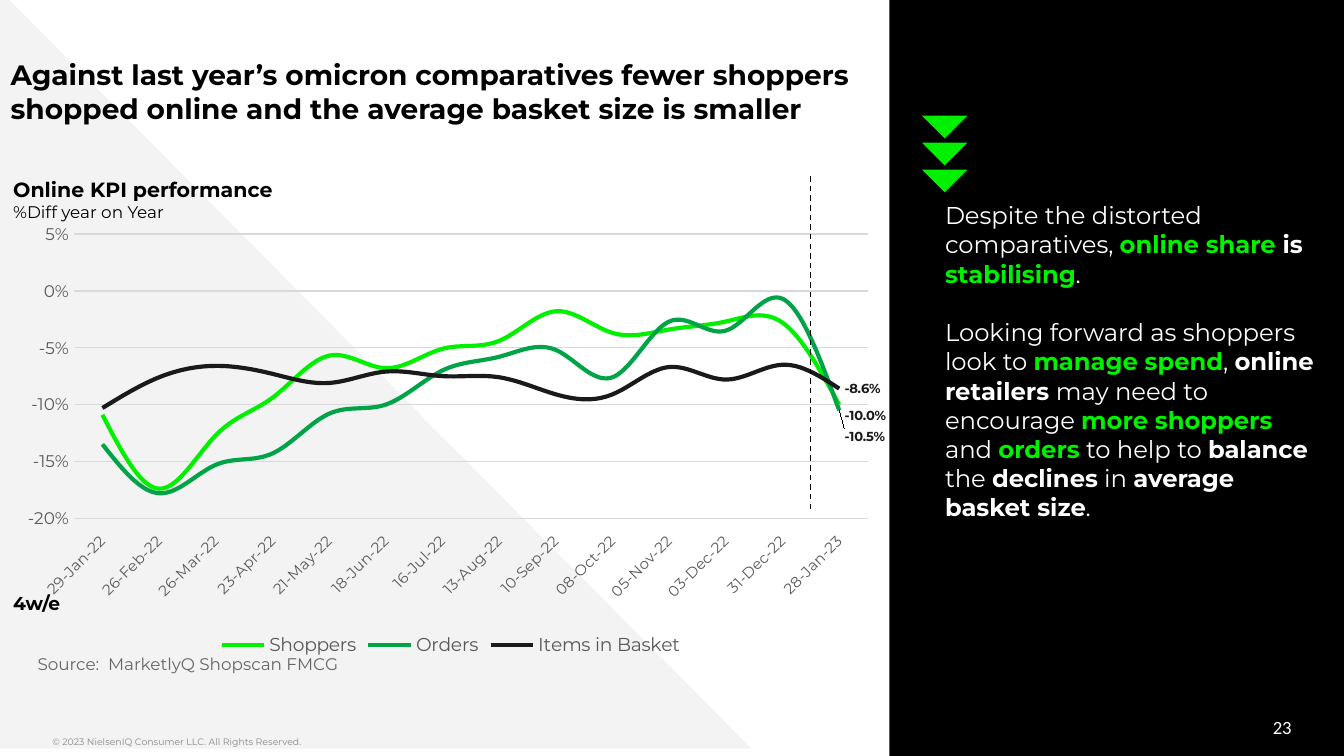
"""Build the online KPI slide with its line chart and takeaway panel."""
from dataclasses import dataclass

from lxml import etree
from pptx import Presentation
from pptx.chart.data import CategoryChartData
from pptx.dml.color import RGBColor
from pptx.enum import chart as ch, dml, shapes, text
from pptx.oxml import parse_xml
from pptx.oxml.ns import nsdecls, qn
from pptx.util import Cm, Pt


@dataclass(frozen=True)
class Theme:
    font: str = "Montserrat"
    num: str = "Calibri"
    black: str = "000000"
    white: str = "FFFFFF"
    pale: str = "F3F3F3"
    lime: str = "00F000"
    green: str = "00A346"
    ink: str = "1A1A1A"
    axis: str = "595959"
    grid: str = "D9D9D9"
    note: str = "666666"
    foot: str = "888888"
    title: float = 15
    body: float = 13
    head: float = 11
    label: float = 10
    small: float = 9
    date: float = 8
    value: float = 7
    tiny: float = 5


T = Theme()
rgb = RGBColor.from_string


def style(font, size, color, bold=False, name=T.font):
    font.size, font.bold, font.name = Pt(size), bold, name
    font.color.rgb = rgb(color)


def layout(inner="", **spots):
    items = "".join(f'<c:{k} val="{v}"/>' for k, v in spots.items())
    return parse_xml(f'<c:layout {nsdecls("c")}><c:manualLayout>{inner}{items}'
                     '</c:manualLayout></c:layout>')


deck = Presentation()
deck.slide_width, deck.slide_height = Cm(25.4), Cm(14.29)
slide = deck.slides.add_slide(deck.slide_layouts[1])
title, body = slide.placeholders

back = [
    (shapes.MSO_SHAPE.RECTANGLE, 16.81, -0.05, 8.71, 14.38, 0, T.black),
    (shapes.MSO_SHAPE.RIGHT_TRIANGLE, 0, -0.18, 14.2, 14.33, 0, T.pale),
]
marks = [(shapes.MSO_SHAPE.RIGHT_TRIANGLE, 17.55, 1.88 + 0.51 * i, 0.61, 0.61, 315, T.lime)
         for i in range(3)]
for kind, x, y, w, h, turn, color in back + marks:
    shape = slide.shapes.add_shape(kind, Cm(x), Cm(y), Cm(w), Cm(h))
    shape.shadow.inherit = False
    shape.rotation = turn
    shape.fill.solid()
    shape.fill.fore_color.rgb = rgb(color)
    shape.line.fill.background()
    title.element.addprevious(shape.element)

for box, x, y, w, h, pad in [(title, 0.2, 0.84, 16.89, 1.09, 0.25),
                             (body, 17.86, 3.66, 7.09, 8.92, 0.13)]:
    box.left, box.top, box.width, box.height = Cm(x), Cm(y), Cm(w), Cm(h)
    frame = box.text_frame
    frame.margin_left = frame.margin_right = 0
    frame.margin_top = frame.margin_bottom = Cm(pad)
    frame.vertical_anchor = text.MSO_ANCHOR.TOP
    frame.auto_size = text.MSO_AUTO_SIZE.NONE

para = title.text_frame.paragraphs[0]
para.text = ("Against last year’s omicron comparatives fewer shoppers "
             "shopped online and the average basket size is smaller")
para.alignment = text.PP_ALIGN.LEFT
style(para.font, T.title, T.black, True)

looks = {"plain": (T.white, False), "bold": (T.white, True), "lime": (T.lime, True)}
points = [
    [("Despite the distorted comparatives, ", "plain"), ("online share ", "lime"),
     ("is ", "bold"), ("stabilising", "lime"), (".", "plain")],
    [("Looking forward as shoppers look to ", "plain"), ("manage spend", "lime"),
     (", ", "plain"), ("online retailers ", "bold"), ("may need to encourage ", "plain"),
     ("more shoppers ", "lime"), ("and ", "plain"), ("orders", "lime"),
     (" to help to ", "plain"), ("balance", "bold"), (" the ", "plain"),
     ("declines", "bold"), (" in ", "plain"), ("average basket size", "bold"),
     (".", "plain")],
]
frame = body.text_frame
for i, parts in enumerate(points):
    para = frame.add_paragraph() if i else frame.paragraphs[0]
    para.space_before = Pt(15.8 * i)
    props = para._p.get_or_add_pPr()
    props.set("marL", "0")
    props.set("indent", "0")
    etree.SubElement(props, qn("a:buNone"))
    style(para.font, T.body, T.white)
    for words, look in parts:
        run = para.add_run()
        run.text = words
        color, run.font.bold = looks[look]
        run.font.color.rgb = rgb(color)

dates = ("29-Jan-22 26-Feb-22 26-Mar-22 23-Apr-22 21-May-22 18-Jun-22 16-Jul-22 "
         "13-Aug-22 10-Sep-22 08-Oct-22 05-Nov-22 03-Dec-22 31-Dec-22 28-Jan-23").split()
rows = [
    ("Shoppers", T.lime, 0.025,
     (-0.109, -0.174, -0.127, -0.094, -0.057, -0.068, -0.051,
      -0.044, -0.018, -0.037, -0.034, -0.027, -0.028, -0.1)),
    ("Orders", T.green, 0.06,
     (-0.135, -0.178, -0.153, -0.143, -0.108, -0.1, -0.07,
      -0.058, -0.052, -0.076, -0.027, -0.035, -0.007, -0.105)),
    ("Items in Basket", T.ink, 0,
     (-0.103, -0.076, -0.066, -0.073, -0.081, -0.071, -0.075,
      -0.076, -0.091, -0.091, -0.067, -0.078, -0.065, -0.086)),
]
data = CategoryChartData(number_format="0.0%")
data.categories = dates
for name, _, _, vals in rows:
    data.add_series(name, vals)
chart = slide.shapes.add_chart(ch.XL_CHART_TYPE.LINE, Cm(0.28), Cm(4.19),
                               Cm(16.48), Cm(8.31), data).chart
chart.has_title = False
style(chart.font, T.label, T.axis)
chart.has_legend = True
chart.legend.position = ch.XL_LEGEND_POSITION.BOTTOM
chart.legend.include_in_layout = False
style(chart.legend.font, T.label, T.axis)

cat, val = chart.category_axis, chart.value_axis
cat.tick_label_position = ch.XL_TICK_LABEL_POSITION.LOW
cat.major_tick_mark = val.major_tick_mark = ch.XL_TICK_MARK.NONE
style(cat.tick_labels.font, T.date, T.axis)
style(val.tick_labels.font, T.small, T.axis)
val.minimum_scale, val.maximum_scale, val.major_unit = -0.2, 0.05, 0.05
val.tick_labels.number_format = "0%"
val.tick_labels.number_format_is_linked = False
val.format.line.fill.background()
val.has_major_gridlines = True
for line in (cat.format.line, val.major_gridlines.format.line):
    line.color.rgb = rgb(T.grid)
    line.width = Pt(0.75)

for line, (_, color, _, _) in zip(chart.plots[0].series, rows):
    line.smooth = True
    line.marker.style = ch.XL_MARKER_STYLE.NONE
    line.format.line.color.rgb = rgb(color)
    line.format.line.width = Pt(2.25)
    line.data_labels.show_value = False
    label = line.points[len(dates) - 1].data_label
    style(label.font, T.value, T.axis, True)
    label.font.color.rgb = rgb(T.ink)
    label.position = ch.XL_LABEL_POSITION.RIGHT

root = chart.element
for label, (_, _, drop, _) in zip(root.iter(qn("c:dLbl")), rows):
    shift = layout(x=0, y=drop)
    label.find(qn("c:idx")).addnext(shift)
    shift.addnext(parse_xml(
        f'<c:numFmt {nsdecls("c")} formatCode="0.0%" sourceLinked="0"/>'))
root.find(f'.//{qn("c:catAx")}/{qn("c:txPr")}/{qn("a:bodyPr")}').set("rot", "-2700000")
plot = root.find(f'.//{qn("c:plotArea")}')
for old in plot.findall(qn("c:layout")):
    plot.remove(old)
plot.insert(0, layout('<c:layoutTarget val="inner"/><c:xMode val="edge"/><c:yMode val="edge"/>',
                      x=0.068, y=0.028, w=0.91, h=0.647))

left, right = text.PP_ALIGN.LEFT, text.PP_ALIGN.RIGHT
notes = [
    (0.25, 3.23, 9, left, [("Online KPI performance", T.head, T.black, True),
                           ("%Diff year on Year", T.small, T.black)]),
    (0.25, 11.07, 1.5, left, [("4w/e", T.label, T.black, True)]),
    (0.71, 12.23, 15, left, [("Source:  MarketlyQ Shopscan FMCG", T.small, T.note)]),
    (0.99, 13.79, 14.07, left,
     [("© 2023 NielsenIQ Consumer LLC. All Rights Reserved.", T.tiny, T.foot)]),
    (18.69, 13.4, 5.72, right, [("23", T.label, T.white, False, T.num)]),
]
for x, y, w, align, lines in notes:
    frame = slide.shapes.add_textbox(Cm(x), Cm(y), Cm(w), Cm(0.5 * len(lines))).text_frame
    frame.word_wrap = True
    frame.margin_left = frame.margin_right = 0
    for i, (words, *look) in enumerate(lines):
        para = frame.add_paragraph() if i else frame.paragraphs[0]
        para.text, para.alignment = words, align
        style(para.font, *look)

rule = slide.shapes.add_connector(shapes.MSO_CONNECTOR.STRAIGHT,
                                  Cm(15.32), Cm(3.33), Cm(15.32), Cm(9.7))
rule.line.color.rgb = rgb(T.black)
rule.line.width = Pt(0.75)
rule.line.dash_style = dml.MSO_LINE.DASH
etree.SubElement(rule.element.spPr, qn("a:effectLst"))

deck.save("out.pptx")
